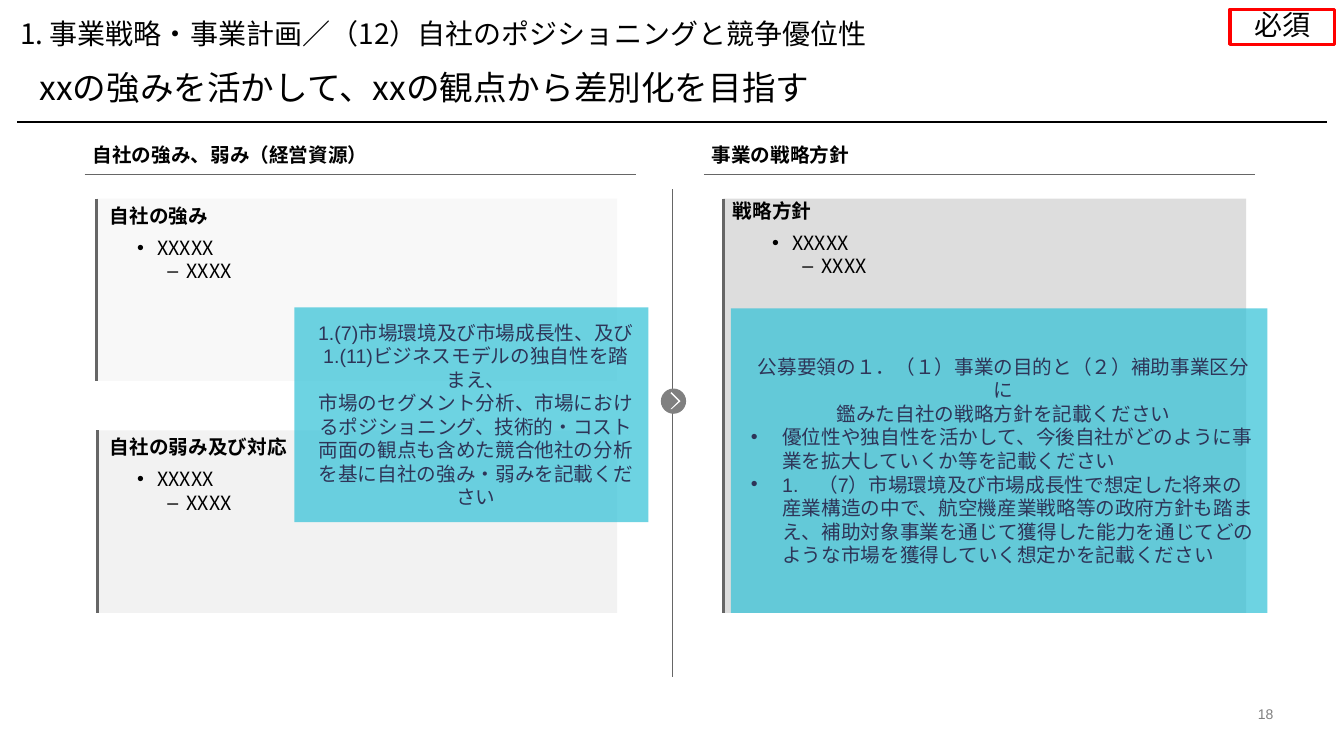
from lxml import etree
from pptx import Presentation
from pptx.dml.color import RGBColor
from pptx.enum.shapes import MSO_CONNECTOR, MSO_SHAPE
from pptx.enum.text import MSO_ANCHOR, MSO_AUTO_SIZE, PP_ALIGN
from pptx.oxml.ns import qn
from pptx.util import Pt

PX = 9144  # 100 px to the inch
TOP, MIDDLE, BOTTOM = MSO_ANCHOR.TOP, MSO_ANCHOR.MIDDLE, MSO_ANCHOR.BOTTOM
LEFT, CENTER, RIGHT = PP_ALIGN.LEFT, PP_ALIGN.CENTER, PP_ALIGN.RIGHT
RECTANGLE, OVAL = MSO_SHAPE.RECTANGLE, MSO_SHAPE.OVAL
STRAIGHT = MSO_CONNECTOR.STRAIGHT
NO_AUTOFIT = MSO_AUTO_SIZE.NONE
JAPANESE = "Noto Sans CJK JP"
NO_INSETS = (0, 0, 0, 0)
color = RGBColor.from_string


def format_shape(shape, fill=None, opacity=100, line=None, line_width=0.75,
                 anchor=TOP, insets=(10, 5, 10, 5)):
    """Set fill, outline and text frame; return the text frame."""
    shape.shadow.inherit = False
    if fill:
        shape.fill.solid()
        shape.fill.fore_color.rgb = color(fill)
        if opacity < 100:
            fill_color = shape.fill._xPr.find(qn("a:solidFill"))[0]
            etree.SubElement(fill_color, qn("a:alpha"), val=str(opacity * 1000))
    else:
        shape.fill.background()
    if line:
        shape.line.color.rgb = color(line)
        shape.line.width = Pt(line_width)
    else:
        shape.line.fill.background()
    frame = shape.text_frame
    frame.auto_size = NO_AUTOFIT
    frame.word_wrap = True
    frame.vertical_anchor = anchor
    frame.margin_left, frame.margin_top, frame.margin_right, frame.margin_bottom = (
        inset * PX for inset in insets)
    return frame


def write(frame, text, size=14, font=JAPANESE, text_color="000000", bold=False,
          align=LEFT, line_spacing=1.0, space_before=0, margin=0, indent=0,
          bullet=None, level=0):
    """Add one paragraph, using the empty first paragraph when there is one."""
    paragraph = frame.add_paragraph() if frame.text else frame.paragraphs[0]
    paragraph.text = text
    paragraph.level = level
    properties = paragraph._p.get_or_add_pPr()
    properties.set("marL", str(margin * PX))
    properties.set("indent", str(indent * PX))
    if bullet:
        etree.SubElement(properties, qn("a:buFont"), typeface="Arial")
        etree.SubElement(properties, qn("a:buChar"), char=bullet)
    paragraph.alignment = align
    paragraph.line_spacing = line_spacing
    paragraph.space_before = Pt(space_before)
    for run in paragraph.runs:
        run.font.size = Pt(size)
        run.font.name = font
        run.font.bold = bold
        run.font.color.rgb = color(text_color)
        latin = run._r.rPr.find(qn("a:latin"))
        east_asian = etree.Element(qn("a:ea"), typeface=JAPANESE)
        latin.addnext(east_asian)


presentation = Presentation()
presentation.slide_width, presentation.slide_height = 1333 * PX, 750 * PX
slide = presentation.slides.add_slide(presentation.slide_layouts[5])
shapes = slide.shapes

# Heading, message title, badge and page number
title = shapes.title
title.left, title.top, title.width, title.height = 39 * PX, 71 * PX, 1230 * PX, 36 * PX
write(format_shape(title, insets=NO_INSETS), "xxの強みを活かして、xxの観点から差別化を目指す",
      size=24, line_spacing=0.9)

heading = shapes.add_textbox(20 * PX, 20 * PX, 1196 * PX, 30 * PX)
write(format_shape(heading, insets=NO_INSETS),
      "1. 事業戦略・事業計画／（12）自社のポジショニングと競争優位性",
      size=20, line_spacing=0.9)

badge = shapes.add_shape(RECTANGLE, 1220 * PX, 9 * PX, 104 * PX, 35 * PX)
write(format_shape(badge, line="FF0000", line_width=2.25, anchor=MIDDLE, insets=NO_INSETS),
      "必須", size=20, align=CENTER, line_spacing=0.9)

page_number = shapes.add_textbox(1221 * PX, 700 * PX, 42 * PX, 17 * PX)
write(format_shape(page_number, anchor=BOTTOM, insets=NO_INSETS), "18",
      size=10, font="Arial", text_color="808080", align=RIGHT)

# Column headings
for left, text in [(82, "自社の強み、弱み（経営資源）"), (696, "事業の戦略方針")]:
    column_heading = shapes.add_textbox(left * PX, 134 * PX, 547 * PX, 39 * PX)
    write(format_shape(column_heading, anchor=MIDDLE), text, bold=True)

# Panels: left, top, width, height, fill, insets, heading margin, heading
left_insets, right_insets = (0, 5, 10, 5), (10, 0, 10, 5)
panels = [
    (97, 197, 515, 181, "F8F8F8", left_insets, 12, "自社の強み"),
    (97, 427, 515, 181, "F2F2F2", left_insets, 12, "自社の弱み及び対応"),
    (717, 197, 519, 411, "DDDDDD", right_insets, 0, "戦略方針"),
]
for left, top, width, height, fill, insets, margin, text in panels:
    panel = shapes.add_shape(RECTANGLE, left * PX, top * PX, width * PX, height * PX)
    frame = format_shape(panel, fill=fill, insets=insets)
    write(frame, text, bold=True, margin=margin)
    write(frame, "XXXXX", space_before=6, margin=59, indent=-20, bullet="•")
    write(frame, "XXXX", margin=88, indent=-19, bullet="–", level=1)

# Rules: from x, from y, to x, to y, colour, width
rules = [
    (17, 121, 1316, 121, "000000", 1),
    (84, 173, 631, 173, "666666", 0.75),
    (698, 173, 1245, 173, "666666", 0.75),
    (667, 188, 667, 672, "666666", 0.75),
    (96, 197, 96, 378, "666666", 2.25),
    (97, 427, 97, 608, "666666", 2.25),
    (718, 197, 718, 608, "666666", 2.25),
]
for from_x, from_y, to_x, to_y, line, line_width in rules:
    rule = shapes.add_connector(STRAIGHT, from_x * PX, from_y * PX, to_x * PX, to_y * PX)
    rule.line.color.rgb = color(line)
    rule.line.width = Pt(line_width)
    etree.SubElement(rule._element.spPr, qn("a:effectLst"))

# Round marker with a chevron on the divider
marker = shapes.add_shape(OVAL, 656 * PX, 386 * PX, 24 * PX, 24 * PX)
format_shape(marker, fill="808080", line="808080")
outline = shapes.build_freeform(666, 389, scale=PX)
outline.add_line_segments([(665, 390), (673, 398), (665, 406), (666, 406), (675, 398)])
format_shape(outline.convert_to_shape(), fill="FFFFFF")

# Translucent guidance notes: box, then (text, is a bullet)
notes = [
    ((725, 306, 532, 302), [
        ("公募要領の１．（１）事業の目的と（２）補助事業区分に\n鑑みた自社の戦略方針を記載ください", False),
        ("優位性や独自性を活かして、今後自社がどのように事業を拡大していくか等を記載ください", True),
        ("1.　（7）市場環境及び市場成長性で想定した将来の産業構造の中で、航空機産業戦略等の"
         "政府方針も踏まえ、補助対象事業を通じて獲得した能力を通じてどのような市場を獲得して"
         "いく想定かを記載ください", True),
    ]),
    ((292, 305, 351, 213), [
        ("1.(7)市場環境及び市場成長性、及び1.(11)ビジネスモデルの独自性を踏まえ、", False),
        ("市場のセグメント分析、市場におけるポジショニング、技術的・コスト両面の観点も含めた"
         "競合他社の分析を基に自社の強み・弱みを記載ください", False),
    ]),
]
for box, paragraphs in notes:
    note = shapes.add_shape(RECTANGLE, *(length * PX for length in box))
    frame = format_shape(note, fill="30C1D7", opacity=70, anchor=MIDDLE)
    for text, is_bullet in paragraphs:
        layout = (dict(margin=41, indent=-31, bullet="•") if is_bullet
                  else dict(margin=9, align=CENTER))
        write(frame, text, font="Arial", text_color="2E3558", **layout)

presentation.save("out.pptx")
